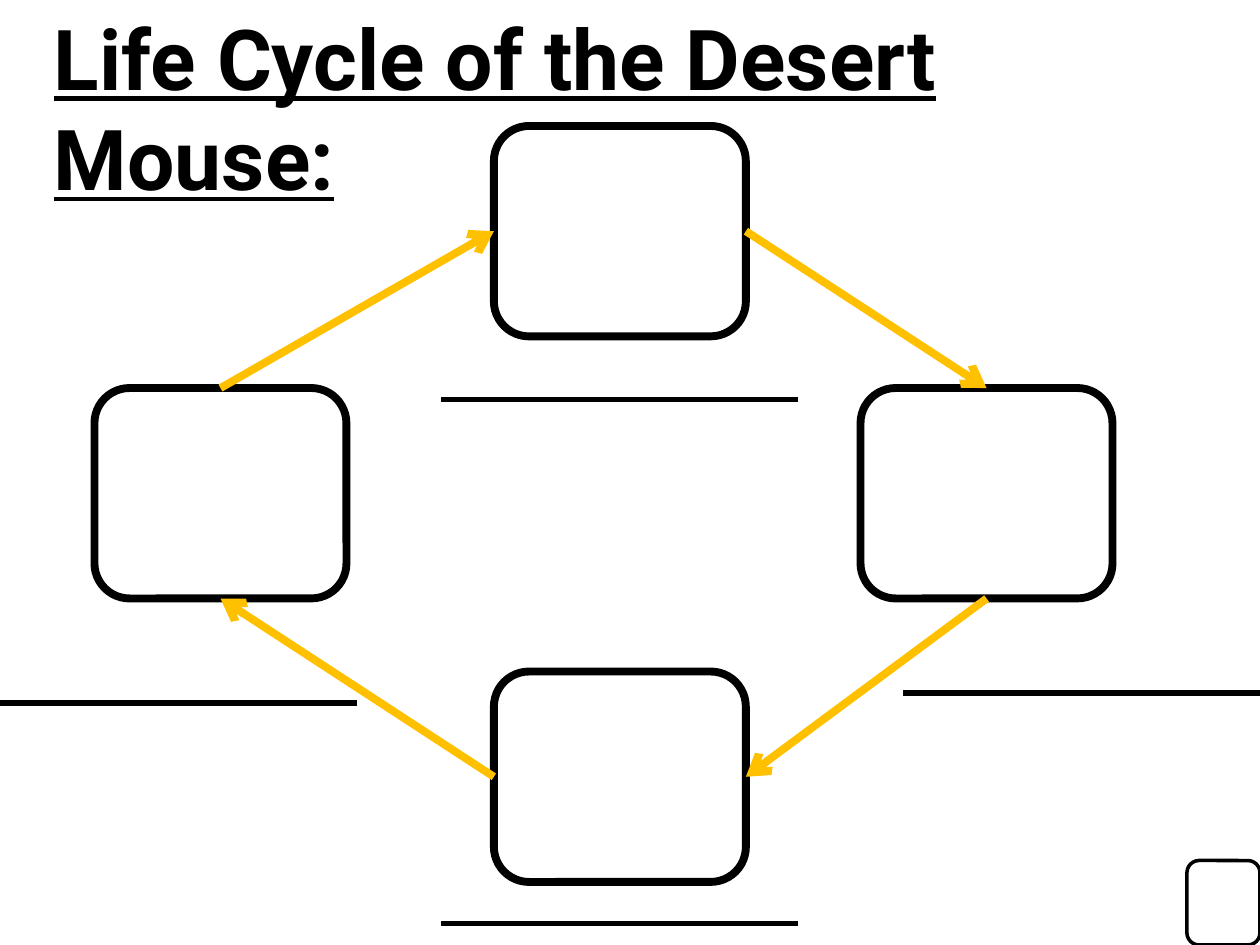
from lxml import etree
from pptx import Presentation
from pptx.dml.color import RGBColor
from pptx.enum.shapes import MSO_CONNECTOR, MSO_SHAPE
from pptx.enum.text import MSO_AUTO_SIZE
from pptx.oxml.ns import qn
from pptx.util import Inches, Pt

BLACK = RGBColor(0x00, 0x00, 0x00)
WHITE = RGBColor(0xFF, 0xFF, 0xFF)
GOLD = RGBColor(0xFF, 0xC0, 0x00)

STAGE_WIDTH, STAGE_HEIGHT = 2, 1.67
ANSWER_WIDTH = 2.83


def add_text(page, text, box, size=48, font="Roboto", color=BLACK, bold=False, underline=False):
    shape = page.shapes.add_textbox(*[Inches(length) for length in box])
    frame = shape.text_frame
    frame.word_wrap = True
    frame.auto_size = MSO_AUTO_SIZE.SHAPE_TO_FIT_TEXT
    span = frame.paragraphs[0].add_run()
    span.text = text
    span.font.size = Pt(size)
    span.font.name = font
    span.font.color.rgb = color
    span.font.bold = bold
    span.font.underline = underline


def add_rounded_box(page, box, weight):
    shape = page.shapes.add_shape(
        MSO_SHAPE.ROUNDED_RECTANGLE, *[Inches(length) for length in box])
    shape.shadow.inherit = False
    shape.fill.solid()
    shape.fill.fore_color.rgb = WHITE
    shape.line.color.rgb = BLACK
    shape.line.width = Pt(weight)


def add_line(page, start, end, color, weight, arrow=False):
    line = page.shapes.add_connector(
        MSO_CONNECTOR.STRAIGHT, *[Inches(length) for length in (*start, *end)])
    line.line.color.rgb = color
    line.line.width = Pt(weight)
    if arrow:
        outline = line.line._get_or_add_ln()
        etree.SubElement(outline, qn("a:tailEnd"), type="arrow")
    etree.SubElement(line._element.spPr, qn("a:effectLst"))


def add_cycle(page, box):
    left, top, width, height = box
    right, bottom = left + width, top + height
    middle_left = left + 3.17
    middle_right = middle_left + STAGE_WIDTH
    side_top = top + 2.08
    side_bottom = side_top + STAGE_HEIGHT
    last_top = bottom - STAGE_HEIGHT
    west = left + STAGE_WIDTH / 2
    east = right - STAGE_WIDTH / 2
    north = top + STAGE_HEIGHT / 2
    south = last_top + STAGE_HEIGHT / 2

    corners = [(middle_left, top), (right - STAGE_WIDTH, side_top),
               (left, side_top), (middle_left, last_top)]
    for corner in corners:
        add_rounded_box(page, (*corner, STAGE_WIDTH, STAGE_HEIGHT), 4.5)

    arrows = [((middle_right, north), (east, side_top)),
              ((east, side_bottom), (middle_right, south)),
              ((middle_left, south), (west, side_bottom)),
              ((west, side_top), (middle_left, north))]
    for start, end in arrows:
        add_line(page, start, end, GOLD, 4.5, arrow=True)


def add_answer_lines(page, box):
    left, top, width, height = box
    starts = [(left + 3.5, top), (left + width - ANSWER_WIDTH, top + 2.33),
              (left + 3.5, top + height), (left, top + 2.41)]
    for x, y in starts:
        add_line(page, (x, y), (x + ANSWER_WIDTH, y), BLACK, 3)


def main():
    deck = Presentation()
    deck.slide_width, deck.slide_height = Inches(10), Inches(7.5)
    page = deck.slides.add_slide(deck.slide_layouts[6])
    add_text(page, "Life Cycle of the Desert Mouse:", (0.33, 0, 9.23, 0.91),
             bold=True, underline=True)
    add_cycle(page, (0.75, 1, 8.08, 6))
    add_answer_lines(page, (0, 3.17, 10, 4.16))
    add_rounded_box(page, (9.42, 6.83, 0.58, 0.67), 2)
    deck.save("out.pptx")


if __name__ == "__main__":
    main()
